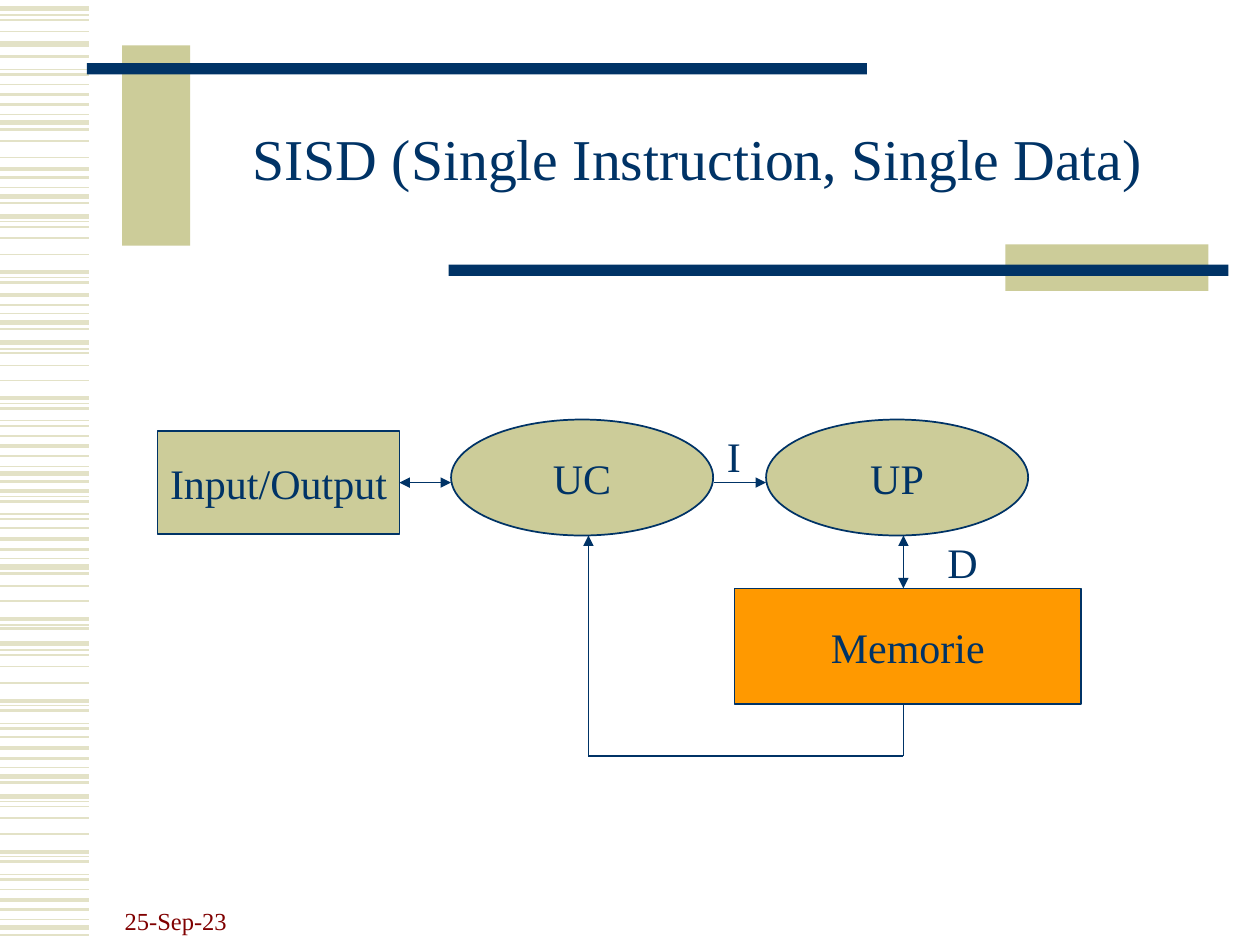
from lxml import etree
from pptx import Presentation
from pptx import util as u
from pptx.dml.color import RGBColor
from pptx.enum import shapes, text
from pptx.oxml.ns import qn

PX = 9144
FONT = "Times New Roman"
HUES = {"navy": "003366", "sand": "CCCC99", "pale": "E3E2C7",
        "orange": "FF9900", "maroon": "800000"}
STRIPES = {
    3: [7, 35, 97, 156, 172, 256, 272, 376, 450, 511, 616, 632, 736],
    2.25: [75, 134, 216, 234, 316, 354, 390, 428, 491, 556, 594, 676, 714],
    1.5: [45, 59, 83, 103, 141, 161, 224, 242, 261, 324, 338, 362, 382,
          398, 412, 436, 455, 499, 564, 578, 602, 621, 684, 698, 722, 742],
    1: [16, 25, 67, 112, 125, 180, 189, 202, 280, 290, 302, 346,
        419, 465, 477, 520, 529, 542, 585, 640, 649, 662, 706],
    0.75: [12, 55, 91, 149, 176, 220, 249, 277, 320, 334, 370, 394,
           408, 443, 496, 516, 560, 574, 609, 636, 680, 694, 730],
}
RECT = shapes.MSO_SHAPE.RECTANGLE
OVAL = shapes.MSO_SHAPE.OVAL
MID = text.MSO_ANCHOR.MIDDLE
CENTER = text.PP_ALIGN.CENTER


def emu(*vals):
    """Turn px lengths into EMU."""
    return [u.Emu(v * PX) for v in vals]


def tint(hue):
    """Look up a colour by name."""
    return RGBColor.from_string(HUES[hue])


def write(shape, words, size, hue="navy", anchor=MID, align=None, wrap=True):
    """Put one styled paragraph into a shape."""
    frame = shape.text_frame
    frame.text = words
    frame.word_wrap = wrap
    frame.vertical_anchor = anchor
    para = frame.paragraphs[0]
    para.alignment = align
    font = para.runs[0].font
    font.name, font.size = FONT, u.Pt(size)
    font.color.rgb = tint(hue)
    return frame


def block(slide, kind, box, fill, edge=None):
    """Add a filled shape, with an outline if edge is given."""
    shape = slide.shapes.add_shape(kind, *emu(*box))
    shape.shadow.inherit = False
    shape.fill.solid()
    shape.fill.fore_color.rgb = tint(fill)
    if edge:
        shape.line.color.rgb = tint(edge)
        shape.line.width = u.Pt(1)
    else:
        shape.line.fill.background()
    return shape


def rule(slide, ends, hue="navy", width=1, heads=()):
    """Add a straight line with arrowheads at the named ends."""
    line = slide.shapes.add_connector(
        shapes.MSO_CONNECTOR.STRAIGHT, *emu(*ends))
    line.line.color.rgb = tint(hue)
    line.line.width = u.Pt(width)
    pen = line.line._get_or_add_ln()
    for end in heads:
        etree.SubElement(pen, qn(f"a:{end}End"), type="triangle")
    etree.SubElement(line._element.spPr, qn("a:effectLst"))
    return line


def margin(slide, x, y, w):
    """Draw the striped band down the left edge."""
    for width, rows in STRIPES.items():
        for row in rows:
            rule(slide, (x, y + row, x + w, y + row), "pale", width)


def header(slide, x, y):
    """Draw the title with its bars and blocks."""
    for dx, dy, w, h, hue in [(28, 0, 54, 159, "sand"), (0, 14, 619, 9, "navy"),
                              (729, 158, 161, 37, "sand"),
                              (287, 174, 619, 9, "navy")]:
        block(slide, RECT, (x + dx, y + dy, w, h), hue)
    title = slide.shapes.add_textbox(*emu(x + 81, y + 31, 807, 125))
    frame = write(title, "SISD (Single Instruction, Single Data)", 33,
                  align=CENTER)
    frame.paragraphs[0].line_spacing = 0.85


def diagram(slide, x, y):
    """Draw the units, their links and the link labels."""
    units = {}
    for name, kind, dx, dy, w, h, hue in [
            ("Input/Output", RECT, 0, 9, 192, 82, "sand"),
            ("UC", OVAL, 233, 0, 208, 92, "sand"),
            ("Memorie", RECT, 458, 134, 275, 92, "orange"),
            ("UP", OVAL, 483, 0, 208, 92, "sand")]:
        units[name] = block(slide, kind, (x + dx, y + dy, w, h), hue, "navy")
        write(units[name], name, 24, align=CENTER, wrap=False)
    both = ("head", "tail")
    links = [rule(slide, (x + a, y + b, x + c, y + d), heads=heads)
             for a, b, c, d, heads in [
                 (192, 50, 233, 50, both), (442, 50, 483, 50, ("tail",)),
                 (592, 92, 592, 134, both), (592, 226, 592, 267, ()),
                 (592, 267, 342, 267, ()), (342, 267, 342, 92, ("tail",))]]
    links[0].begin_connect(units["Input/Output"], 3)
    for name, dx, dy, w in [("I", 442, 0, 42), ("D", 617, 84, 50)]:
        label = slide.shapes.add_textbox(*emu(x + dx, y + dy, w, 50))
        frame = write(label, name, 24, anchor=text.MSO_ANCHOR.TOP)
        frame.margin_top = emu(9)[0]


def footer(slide, *box):
    """Write the date at the foot of the slide."""
    write(slide.shapes.add_textbox(*emu(*box)), "25-Sep-23", 14, "maroon",
          text.MSO_ANCHOR.BOTTOM)


def main():
    """Build and save the slide."""
    deck = Presentation()
    deck.slide_width, deck.slide_height = emu(1000, 750)
    slide = deck.slides.add_slide(deck.slide_layouts[6])
    margin(slide, 0, 0, 71)
    header(slide, 69, 36)
    footer(slide, 89, 697, 208, 50)
    diagram(slide, 125, 333)
    deck.save("out.pptx")


if __name__ == "__main__":
    main()
